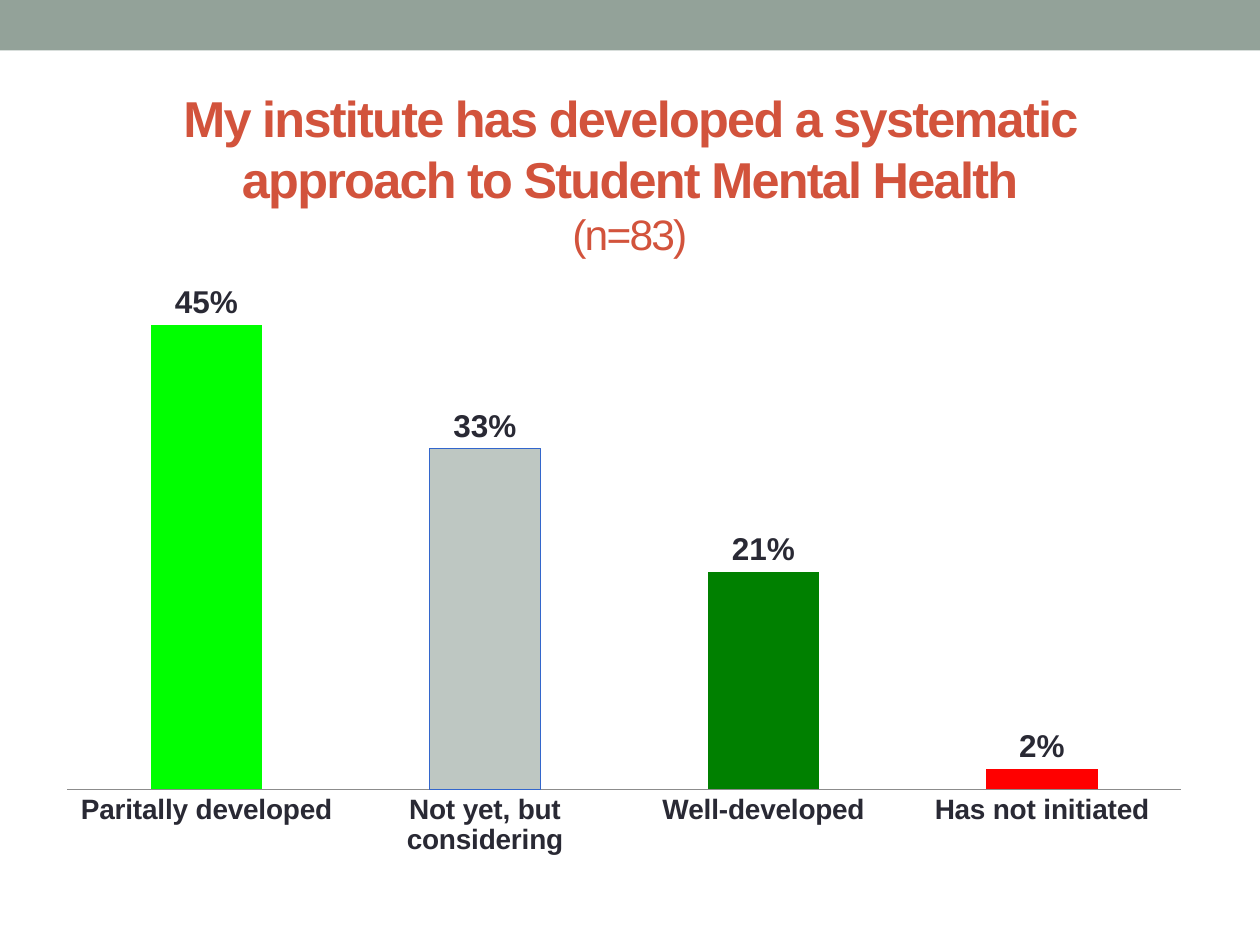
from typing import NamedTuple

from lxml import etree
from pptx import Presentation
from pptx import util as u
from pptx.chart import data as cd
from pptx.dml.color import RGBColor
from pptx.enum import chart as ce
from pptx.enum import shapes, text
from pptx.oxml import ns

SAGE = RGBColor(0x93, 0xA2, 0x99)
RUST = RGBColor(0xD2, 0x53, 0x3C)
INK = RGBColor(0x29, 0x29, 0x34)
AXIS_GREY = RGBColor(0x8C, 0x8C, 0x8C)
OUTLINE_BLUE = RGBColor(0x33, 0x66, 0xCC)
LIME = RGBColor(0x00, 0xFF, 0x00)
SILVER = RGBColor(0xBE, 0xC7, 0xC2)
GREEN = RGBColor(0x00, 0x80, 0x00)
RED = RGBColor(0xFF, 0x00, 0x00)
FONT = "Arial"


class Answer(NamedTuple):
    label: str
    share: float
    fill: RGBColor
    outline: RGBColor | None = None


ANSWERS = [
    Answer("Paritally developed", 0.45, LIME),
    Answer("Not yet, but considering", 0.33, SILVER, OUTLINE_BLUE),
    Answer("Well-developed", 0.21, GREEN),
    Answer("Has not initiated", 0.02, RED),
]
PLOT_LAYOUT = {"x": 0.02, "y": 0.03, "w": 0.96, "h": 0.84}


def style_font(font, size: float, color: RGBColor, bold: bool) -> None:
    font.name, font.size, font.bold = FONT, u.Pt(size), bold
    font.color.rgb = color


def add_band(slide) -> None:
    band = slide.shapes.add_shape(
        shapes.MSO_SHAPE.RECTANGLE, u.Pt(0), u.Pt(0), u.Pt(720), u.Pt(28.8))
    band.shadow.inherit = False
    band.fill.solid()
    band.fill.fore_color.rgb = SAGE
    band.line.fill.background()


def add_title(slide) -> None:
    frame = slide.shapes.add_textbox(
        u.Pt(36), u.Pt(41.76), u.Pt(648), u.Pt(114.48)).text_frame
    frame.word_wrap = True
    frame.margin_left = frame.margin_right = u.Pt(14)
    frame.vertical_anchor = text.MSO_ANCHOR.MIDDLE
    heading = frame.paragraphs[0]
    heading.alignment = text.PP_ALIGN.CENTER
    statement = heading.add_run()
    statement.text = "My institute has developed a systematic approach to Student Mental Health"
    heading.add_line_break()
    sample = heading.add_run()
    sample.text = "(n=83)"
    for run, size, bold in ((statement, 28.8, True), (sample, 24.3, False)):
        style_font(run.font, size, RUST, bold)
        run.font._element.set("spc", "-100")


def fix_plot_layout(chart) -> None:
    plot_area = chart._chartSpace.chart.plotArea
    for old in plot_area.findall(ns.qn("c:layout")):
        plot_area.remove(old)
    layout = etree.Element(ns.qn("c:layout"))
    manual = etree.SubElement(layout, ns.qn("c:manualLayout"))
    settings = {"layoutTarget": "inner", "xMode": "edge", "yMode": "edge", **PLOT_LAYOUT}
    for tag, value in settings.items():
        etree.SubElement(manual, ns.qn(f"c:{tag}")).set("val", str(value))
    plot_area.insert(0, layout)


def add_answer_chart(slide, answers: list[Answer]) -> None:
    shares = cd.CategoryChartData(number_format="0%")
    shares.categories = [answer.label for answer in answers]
    shares.add_series("Series 1", [answer.share for answer in answers])
    chart = slide.shapes.add_chart(
        ce.XL_CHART_TYPE.COLUMN_CLUSTERED, u.Pt(25.2), u.Pt(145.44),
        u.Pt(663.12), u.Pt(351.36), shares).chart
    chart.has_legend = chart.has_title = False
    style_font(chart.font, 10, INK, False)
    fix_plot_layout(chart)

    category_axis = chart.category_axis
    category_axis.major_tick_mark = ce.XL_TICK_MARK.NONE
    category_axis.format.line.color.rgb = AXIS_GREY
    category_axis.format.line.width = u.Pt(0.75)
    style_font(category_axis.tick_labels.font, 16, INK, True)

    value_axis = chart.value_axis
    value_axis.visible = value_axis.has_major_gridlines = False
    value_axis.minimum_scale, value_axis.maximum_scale = 0, 0.5
    value_axis.tick_labels.number_format = "0%"
    value_axis.tick_labels.number_format_is_linked = False

    plot = chart.plots[0]
    plot.gap_width, plot.overlap, plot.vary_by_categories = 150, -25, False
    series = plot.series[0]
    series.format.fill.solid()
    series.format.fill.fore_color.rgb = SAGE
    for index, answer in enumerate(answers):
        bar = series.points[index].format
        bar.fill.solid()
        bar.fill.fore_color.rgb = answer.fill
        if answer.outline:
            bar.line.color.rgb = answer.outline
            bar.line.width = u.Pt(0.5)
        else:
            bar.line.fill.background()

    labels = series.data_labels
    labels.show_value = True
    labels.number_format, labels.number_format_is_linked = "0%", False
    labels.position = ce.XL_LABEL_POSITION.OUTSIDE_END
    style_font(labels.font, 18, INK, True)


def main() -> None:
    """Build the survey slide on student mental health approaches."""
    deck = Presentation()
    deck.slide_width, deck.slide_height = u.Pt(720), u.Pt(540)
    slide = deck.slides.add_slide(deck.slide_layouts[6])
    add_band(slide)
    add_title(slide)
    add_answer_chart(slide, ANSWERS)
    deck.save("out.pptx")


if __name__ == "__main__":
    main()
